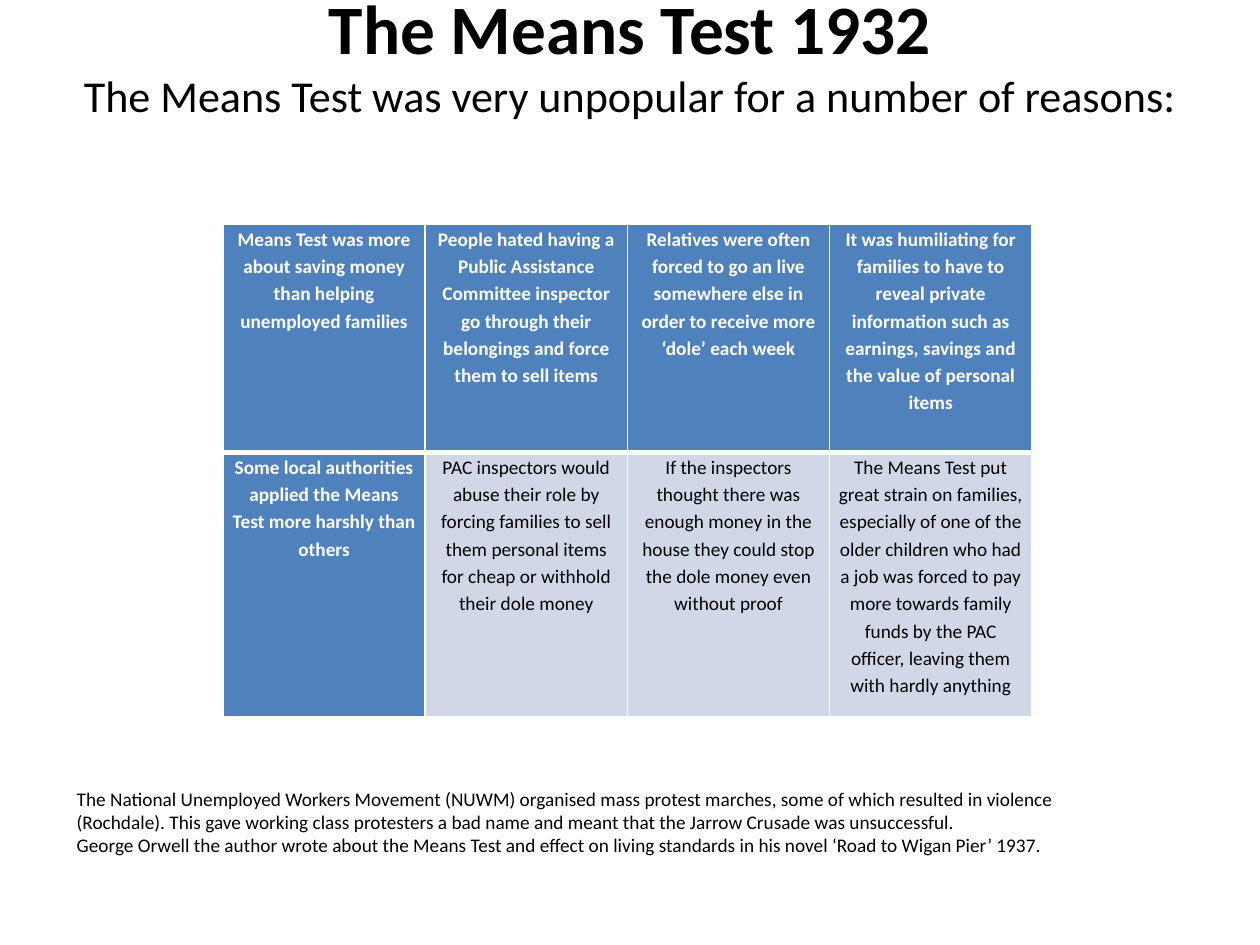
import pptx
import pptx.dml.color
import pptx.enum.text
import pptx.oxml.ns
import pptx.util
from lxml import etree

Inches = pptx.util.Inches
Align = pptx.enum.text.PP_ALIGN
Anchor = pptx.enum.text.MSO_ANCHOR

THEME = {
    "font": "Calibri",
    "ink": "000000",
    "paper": "FFFFFF",
    "header": "4F81BD",
    "body": "D0D8E8",
    "title_size": 39.6,
    "subtitle_size": 25.2,
    "text_size": 11,
    "thin": 1,
    "thick": 3,
}

TITLE = "The Means Test 1932"
SUBTITLE = "The Means Test was very unpopular for a number of reasons:"

REASONS = [
    [
        "Means Test was more about saving money than helping unemployed families",
        "People hated having a Public Assistance Committee inspector go through their "
        "belongings and force them to sell items",
        "Relatives were often forced to go an live somewhere else in order to receive "
        "more ‘dole’ each week",
        "It was humiliating for families to have to reveal private information such as "
        "earnings, savings and the value of personal items",
    ],
    [
        "Some local authorities applied the Means Test more harshly than others",
        "PAC inspectors would abuse their role by forcing families to sell them "
        "personal items for cheap or withhold their dole money",
        "If the inspectors thought there was enough money in the house they could stop "
        "the dole money even without proof",
        "The Means Test put great strain on families, especially of one of the older "
        "children who had a job was forced to pay more towards family funds by the PAC "
        "officer, leaving them with hardly anything",
    ],
]
ROW_HEIGHTS = [1.81, 2.1]

NOTES = [
    "The National Unemployed Workers Movement (NUWM) organised mass protest marches, "
    "some of which resulted in violence (Rochdale). This gave working class protesters "
    "a bad name and meant that the Jarrow Crusade was unsuccessful.",
    "George Orwell the author wrote about the Means Test and effect on living standards "
    "in his novel ‘Road to Wigan Pier’ 1937.",
]


def write(para, text, size=THEME["text_size"], color=THEME["ink"], bold=False,
          align=Align.LEFT, spacing=None):
    para.alignment = align
    if spacing:
        para.line_spacing = spacing
    span = para.add_run()
    span.text = text
    span.font.name = THEME["font"]
    span.font.size = pptx.util.Pt(size)
    span.font.bold = bold
    span.font.color.rgb = pptx.dml.color.RGBColor.from_string(color)


def add_box(page, left, top, width, height):
    box = page.shapes.add_textbox(*map(Inches, (left, top, width, height)))
    box.text_frame.word_wrap = True
    box.text_frame.vertical_anchor = Anchor.MIDDLE
    return box


def set_borders(cell, widths):
    qn = pptx.oxml.ns.qn
    properties = cell._tc.get_or_add_tcPr()
    for side, width in widths.items():
        line = etree.SubElement(properties, qn("a:ln" + side), w=str(pptx.util.Pt(width)))
        fill = etree.SubElement(line, qn("a:solidFill"))
        etree.SubElement(fill, qn("a:srgbClr"), val=THEME["paper"])


def add_title(page):
    frame = add_box(page, 0.5, 0.3, 9, 1.48).text_frame
    frame.margin_bottom = Inches(1.29)
    write(frame.paragraphs[0], TITLE, size=THEME["title_size"], bold=True,
          align=Align.CENTER)
    write(frame.add_paragraph(), SUBTITLE, size=THEME["subtitle_size"],
          align=Align.CENTER)


def add_reasons(page):
    place = map(Inches, (1.77, 1.78, 6.42, sum(ROW_HEIGHTS)))
    table = page.shapes.add_table(len(REASONS), len(REASONS[0]), *place).table
    for r, (texts, height) in enumerate(zip(REASONS, ROW_HEIGHTS)):
        table.rows[r].height = Inches(height)
        for c, text in enumerate(texts):
            cell = table.cell(r, c)
            heading = r == 0 or c == 0
            thin, thick = THEME["thin"], THEME["thick"]
            set_borders(cell, {"L": thin, "R": thin,
                               "T": thick if r == 1 else thin,
                               "B": thick if r == 0 else thin})
            cell.fill.solid()
            cell.fill.fore_color.rgb = pptx.dml.color.RGBColor.from_string(
                THEME["header" if heading else "body"])
            cell.margin_left = cell.margin_right = Inches(0.07)
            cell.margin_top = cell.margin_bottom = 0
            write(cell.text_frame.paragraphs[0], text, bold=heading,
                  color=THEME["paper" if heading else "ink"],
                  align=Align.CENTER, spacing=1.15)


def add_notes(page):
    frame = add_box(page, 0.51, 6.19, 8.58, 0.66).text_frame
    frame.auto_size = pptx.enum.text.MSO_AUTO_SIZE.SHAPE_TO_FIT_TEXT
    for index, text in enumerate(NOTES):
        write(frame.add_paragraph() if index else frame.paragraphs[0], text)


def main():
    deck = pptx.Presentation()
    deck.slide_width, deck.slide_height = Inches(10), Inches(7.5)
    page = deck.slides.add_slide(deck.slide_layouts[6])
    add_title(page)
    add_reasons(page)
    add_notes(page)
    deck.save("out.pptx")


if __name__ == "__main__":
    main()
